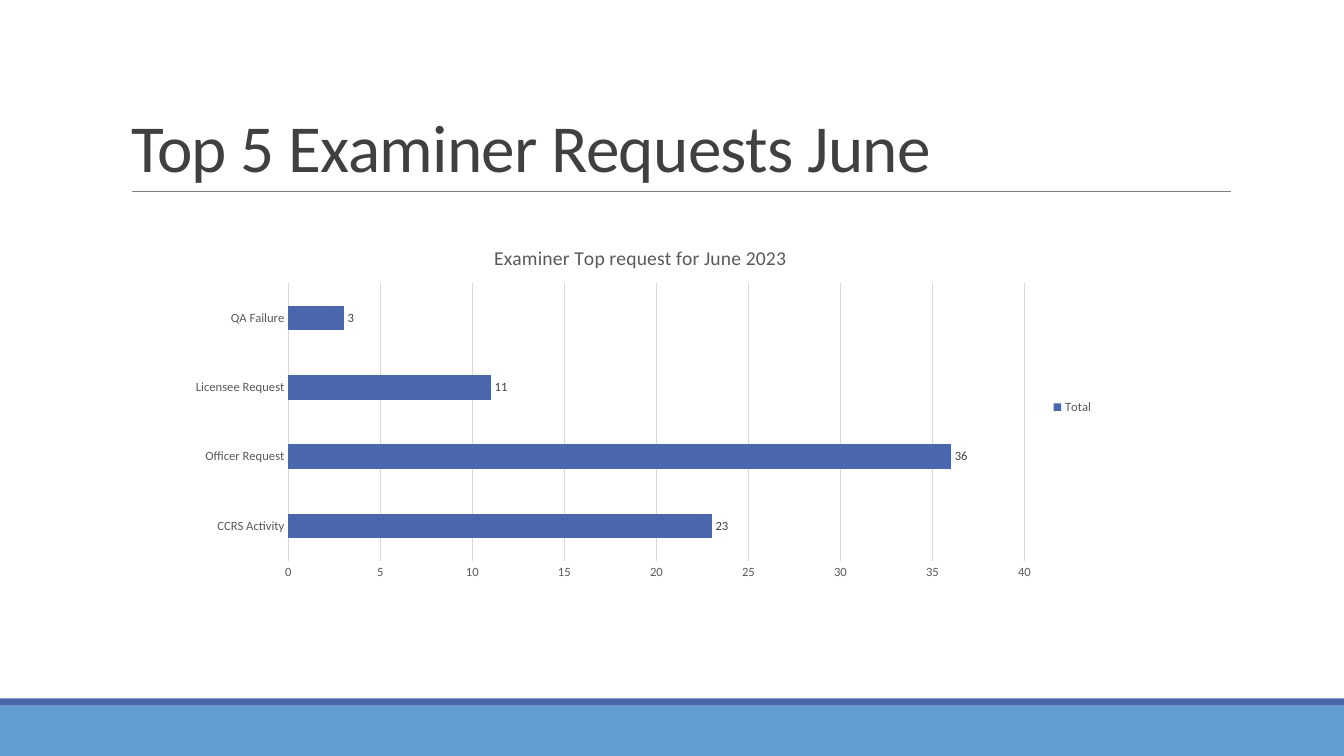
import pptx
import pptx.util
import pptx.chart.data
import pptx.dml.color
import pptx.enum.chart
import pptx.enum.shapes
import pptx.enum.text
from lxml import etree
from pptx.oxml.ns import qn

Cm, Pt = pptx.util.Cm, pptx.util.Pt
FONT = "Calibri"
COLORS = {
    "band": "629DD1",
    "accent": "4A66AC",
    "rule": "808080",
    "title": "404040",
    "label": "595959",
    "grid": "D9D9D9",
}
REQUESTS = {
    "CCRS Activity": 23,
    "Officer Request": 36,
    "Licensee Request": 11,
    "QA Failure": 3,
}


def rgb(name):
    return pptx.dml.color.RGBColor.from_string(COLORS[name])


def set_font(font, size, color):
    font.name = FONT
    font.size = Pt(size)
    font.bold = False
    font.color.rgb = rgb(color)


def set_line(line, color, width):
    line.color.rgb = rgb(color)
    line.width = Pt(width)


def write(tf, text, size, color, spacing=None, line_spacing=None):
    p = tf.paragraphs[0]
    p.line_spacing = line_spacing
    r = p.add_run()
    r.text = text
    set_font(r.font, size, color)
    if spacing is not None:
        r._r.get_or_add_rPr().set("spc", str(round(spacing * 100)))


def add_band(s, top, width, height, color):
    sp = s.shapes.add_shape(
        pptx.enum.shapes.MSO_SHAPE.RECTANGLE, 0, top, width, height)
    sp.shadow.inherit = False
    sp.fill.solid()
    sp.fill.fore_color.rgb = rgb(color)
    sp.line.fill.background()


def add_rule(s, left, right, y):
    line = s.shapes.add_connector(
        pptx.enum.shapes.MSO_CONNECTOR.STRAIGHT, left, y, right, y)
    set_line(line.line, "rule", 0.5)
    etree.SubElement(line._element.spPr, qn("a:effectLst"))


def add_title(s, text):
    sp = s.shapes.title
    sp.left, sp.top, sp.width, sp.height = Cm(3.05), Cm(0.79), Cm(27.94), Cm(4.04)
    tf = sp.text_frame
    tf.word_wrap = True
    tf.vertical_anchor = pptx.enum.text.MSO_ANCHOR.BOTTOM
    write(tf, text, 48, "title", spacing=-0.5, line_spacing=0.85)
    tf.paragraphs[0].alignment = pptx.enum.text.PP_ALIGN.LEFT


def format_axis(axis):
    axis.major_tick_mark = pptx.enum.chart.XL_TICK_MARK.NONE
    axis.minor_tick_mark = pptx.enum.chart.XL_TICK_MARK.NONE
    set_font(axis.tick_labels.font, 9, "label")


def add_bar_chart(s, title, series_name, values):
    data = pptx.chart.data.CategoryChartData()
    data.categories = list(values)
    data.add_series(series_name, list(values.values()))
    chart = s.shapes.add_chart(
        pptx.enum.chart.XL_CHART_TYPE.BAR_CLUSTERED,
        Cm(4.47), Cm(5.74), Cm(23.34), Cm(9.04), data).chart
    chart.font.name = FONT
    chart.font.size = Pt(10)
    chart.has_title = True
    write(chart.chart_title.text_frame, title, 14, "label")
    chart.chart_title.include_in_layout = False

    # Axes
    cat, val = chart.category_axis, chart.value_axis
    format_axis(cat)
    format_axis(val)
    set_line(cat.format.line, "grid", 0.75)
    val.format.line.fill.background()
    val.minimum_scale, val.maximum_scale, val.major_unit = 0, 40, 5
    val.has_major_gridlines = True
    set_line(val.major_gridlines.format.line, "grid", 0.75)

    # Bars and value labels
    plot = chart.plots[0]
    plot.gap_width = 182
    plot.vary_by_categories = False
    bars = plot.series[0]
    bars.format.fill.solid()
    bars.format.fill.fore_color.rgb = rgb("accent")
    labels = bars.data_labels
    labels.show_value = True
    labels.position = pptx.enum.chart.XL_LABEL_POSITION.OUTSIDE_END
    set_font(labels.font, 9, "title")

    # Legend
    chart.has_legend = True
    chart.legend.position = pptx.enum.chart.XL_LEGEND_POSITION.RIGHT
    chart.legend.include_in_layout = False
    set_font(chart.legend.font, 9, "label")


def main():
    prs = pptx.Presentation()
    prs.slide_width, prs.slide_height = Cm(33.87), Cm(19.05)
    s = prs.slides.add_slide(prs.slide_layouts[5])

    # Footer bands and title rule
    add_band(s, Cm(17.78), prs.slide_width, Cm(1.27), "band")
    add_band(s, Cm(17.6), prs.slide_width, Cm(0.18), "accent")
    add_rule(s, Cm(3.33), Cm(31.01), Cm(4.83))

    # Content
    add_title(s, "Top 5 Examiner Requests June")
    add_bar_chart(s, "Examiner Top request for June 2023", "Total", REQUESTS)

    prs.save("out.pptx")


if __name__ == "__main__":
    main()
